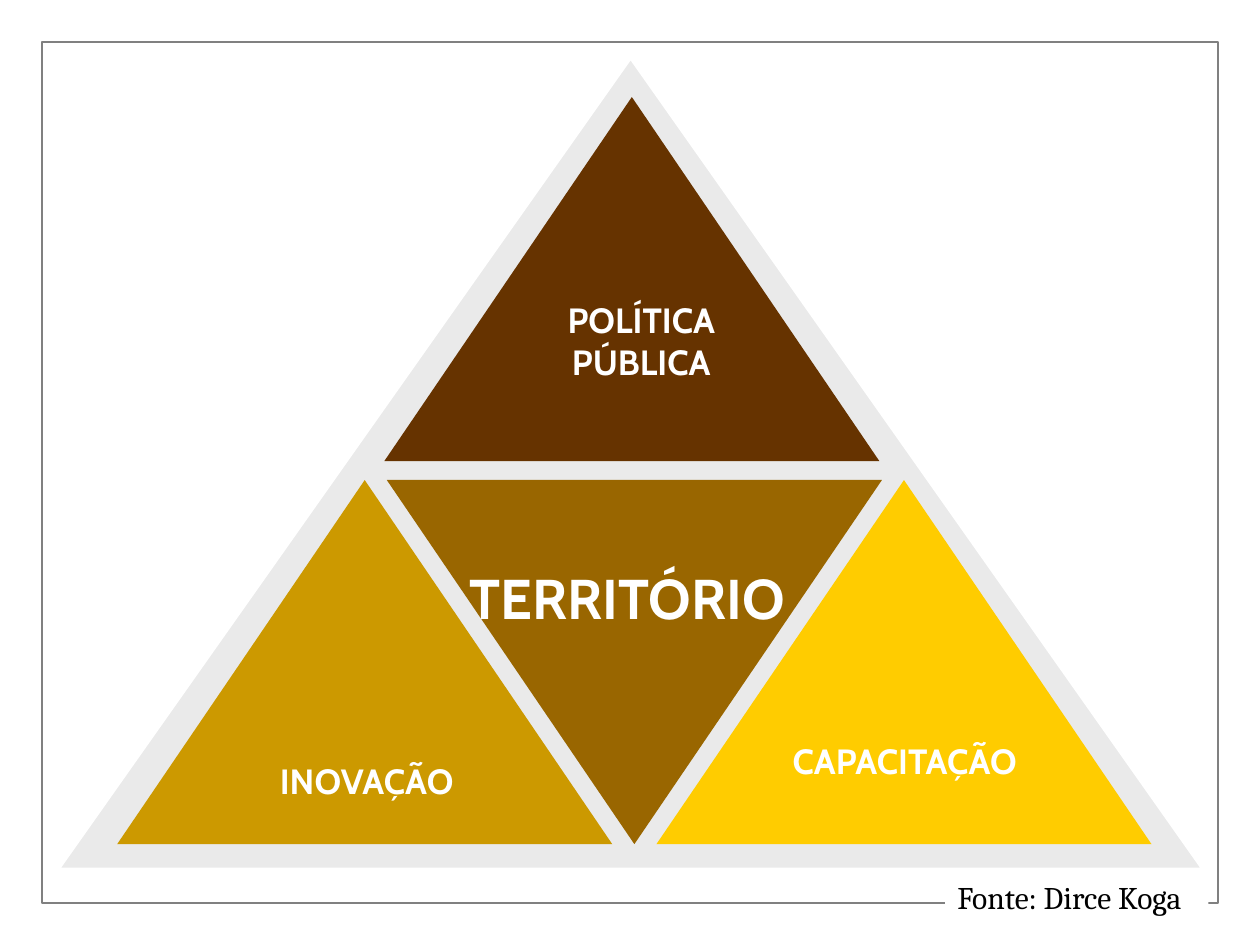
from lxml.etree import SubElement as Sub
from pptx import Presentation as Deck
from pptx.dml.color import RGBColor as Rgb
from pptx.enum.shapes import MSO_SHAPE as Kind
from pptx.enum.text import MSO_ANCHOR as Anchor, PP_ALIGN as Align
from pptx.oxml.ns import qn
from pptx.util import Inches, Pt

HUES = {
    "white": "FFFFFF", "black": "000000", "frame": "808080",
    "base": "EAEAEA", "top": "663300", "mid": "996600",
    "left": "CC9900", "right": "FFCC00",
}
WIDE, HIGH = 10, 7.5
UNIT = WIDE / 100
SIDE, RISE = 39.3, 28.9
COL, STEP, ROW = 9.3, 21.4, 38.1


def hue(name):
    return Rgb.from_string(HUES[name])


def place(*box):
    return [Inches(part * UNIT) for part in box]


def draw(owner, kind, box, fill=None, line=None, flip=False):
    shape = owner.shapes.add_shape(kind, *place(*box))
    shape.shadow.inherit = False
    if fill:
        shape.fill.solid()
        shape.fill.fore_color.rgb = hue(fill)
    else:
        shape.fill.background()
    if line:
        shape.line.color.rgb = hue(line[0])
        shape.line.width = Pt(line[1])
    else:
        shape.line.fill.background()
    if flip:
        shape._element.spPr.get_or_add_xfrm().set("flipV", "1")
    return shape


def write(para, text, size, face, tint, bold=False):
    run = para.add_run()
    run.text = text
    font = run.font
    font.size, font.name, font.bold = Pt(size), face, bold
    font.color.rgb = hue(tint)
    return run


def shade(run):
    props = run._r.get_or_add_rPr()
    list_ = props.makeelement(qn("a:effectLst"), {})
    props.find(qn("a:solidFill")).addnext(list_)
    cast = Sub(list_, qn("a:outerShdw"), dist="38100", dir="2700000", algn="tl")
    Sub(cast, qn("a:srgbClr"), val=HUES["black"])


def label(owner, text, box, size=20, anchor=Anchor.MIDDLE, drop=0):
    frame = owner.shapes.add_textbox(*place(*box)).text_frame
    frame.word_wrap = True
    frame.vertical_anchor = anchor
    frame.margin_top = Inches(0.05 + drop)
    para = frame.paragraphs[0]
    para.alignment = Align.CENTER
    shade(write(para, text, size, "Cabin", "white", True))


def credit(slide):
    shape = draw(slide, Kind.RECTANGLE, (75, 69.2, 20.9, 4), "white")
    frame = shape.text_frame
    frame.word_wrap = False
    frame.vertical_anchor = Anchor.TOP
    para = frame.paragraphs[0]
    para.alignment = Align.LEFT
    write(para, "Fonte: Dirce Koga", 18, "Cambria", "black")


def main():
    deck = Deck()
    deck.slide_width, deck.slide_height = Inches(WIDE), Inches(HIGH)
    slide = deck.slides.add_slide(deck.slide_layouts[6])
    draw(slide, Kind.RECTANGLE, (3.33, 3.33, 93.33, 68.33), line=("frame", 1))

    group = slide.shapes.add_group_shape()
    peak = Kind.ISOSCELES_TRIANGLE
    draw(group, peak, (4.2, 4.2, 91.7, 65), "base", ("white", 5))
    for step, name in ((0, "left"), (2, "right"), (1, "mid")):
        box = (COL + step * STEP, ROW, SIDE, RISE)
        draw(group, peak, box, name, flip=name == "mid")
    draw(group, peak, (30.5, 7.7, SIDE, RISE), "top")

    label(group, "INOVAÇÃO", (13.1, 59.8, 32, 4.3))
    label(group, "CAPACITAÇÃO", (56.7, 58.2, 30.2, 4.3))
    label(group, "POLÍTICA PÚBLICA", (39.5, 17.5, 22.8, 15.7), drop=0.33)
    label(group, "TERRITÓRIO", (33.8, 44.2, 32, 8.2), 32, Anchor.TOP)
    credit(slide)
    deck.save("out.pptx")


if __name__ == "__main__":
    main()
